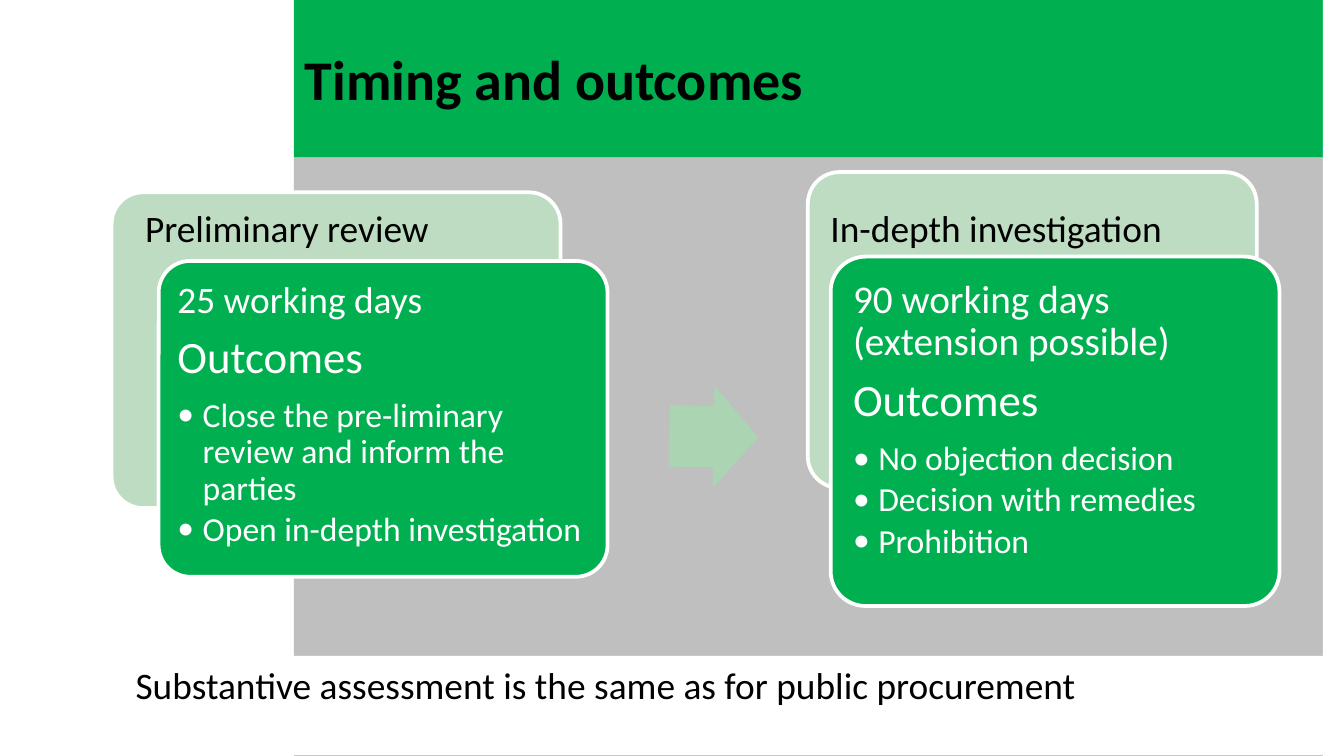
from lxml.etree import SubElement
from pptx import Presentation
from pptx.dml.color import RGBColor
from pptx.enum.shapes import MSO_SHAPE as Preset
from pptx.enum.text import MSO_ANCHOR as Anchor, MSO_AUTO_SIZE as AutoSize, PP_ALIGN as Align
from pptx.oxml.ns import qn
from pptx.util import Pt

BLACK = RGBColor(0x00, 0x00, 0x00)
WHITE = RGBColor(0xFF, 0xFF, 0xFF)
GREY = RGBColor(0xBF, 0xBF, 0xBF)
GREEN = RGBColor(0x00, 0xB0, 0x50)
PALE_GREEN = RGBColor(0xBD, 0xDC, 0xC2)
ARROW_GREEN = RGBColor(0xAB, 0xD4, 0xB3)

BULLET_INDENT = 13.5
CARD_WIDTH = 240.5
BACK_HEIGHT = 169.2

STAGES = [
    {
        "heading": ("Preliminary review", (70.6, 106.5, 170, 31.5)),
        "back": (59.8, 103),
        "front": (85, 139.8, 169.2),
        "inset": 5.8,
        "text": (89.3, 144.7, 230.4, 159.8),
        "duration": ("25 working days", 20),
        "outcomes": [
            "Close the pre-liminary review and inform the parties",
            "Open in-depth investigation",
        ],
    },
    {
        "heading": ("In-depth investigation", (437.8, 106.5, 193, 31.5)),
        "back": (432.8, 92.2),
        "front": (445, 137.5, 187.2),
        "inset": 6.3,
        "text": (450.7, 143.3, 229, 176.4),
        "duration": ("90 working days (extension possible)", 21),
        "outcomes": ["No objection decision", "Decision with remedies", "Prohibition"],
    },
]


def apply_format(target, values):
    for name, value in values.items():
        setattr(target, name, value)


def format_font(paragraph, size, color, bold=False):
    apply_format(paragraph.font, {"name": "Calibri", "size": Pt(size), "bold": bold})
    paragraph.font.color.rgb = color


def add_block(slide, preset, box, fill, outline=None):
    shape = slide.shapes.add_shape(preset, *map(Pt, box))
    shape.shadow.inherit = False
    shape.fill.solid()
    shape.fill.fore_color.rgb = fill
    if outline is None:
        shape.line.fill.background()
    else:
        shape.line.color.rgb = outline
        shape.line.width = Pt(2)
    return shape


def add_card(slide, box, fill):
    card = add_block(slide, Preset.ROUNDED_RECTANGLE, box, fill, WHITE)
    card.adjustments[0] = 0.1


def write_label(shape, text):
    frame = shape.text_frame
    apply_format(frame, {
        "word_wrap": True, "vertical_anchor": Anchor.TOP,
        "auto_size": AutoSize.SHAPE_TO_FIT_TEXT,
    })
    paragraph = frame.paragraphs[0]
    paragraph.text = text
    paragraph.alignment = Align.LEFT
    format_font(paragraph, 20, BLACK)


def add_bullet(paragraph):
    properties = paragraph._p.get_or_add_pPr()
    properties.set("marL", str(Pt(BULLET_INDENT)))
    properties.set("indent", str(-Pt(BULLET_INDENT)))
    SubElement(properties, qn("a:buFont")).set("typeface", "Calibri")
    SubElement(properties, qn("a:buChar")).set("char", "•")


def add_stage_text(slide, stage):
    frame = slide.shapes.add_textbox(*map(Pt, stage["text"])).text_frame
    margins = ("margin_left", "margin_top", "margin_right", "margin_bottom")
    apply_format(frame, dict.fromkeys(margins, Pt(stage["inset"])))
    frame.word_wrap = True
    lines = [(*stage["duration"], False), ("Outcomes", 24, False)]
    lines += [(outcome, 18, True) for outcome in stage["outcomes"]]
    for index, (text, size, bulleted) in enumerate(lines):
        paragraph = frame.add_paragraph() if index else frame.paragraphs[0]
        paragraph.text = text
        if bulleted:
            paragraph.level = 1
            add_bullet(paragraph)
        share = 0.15 if bulleted else 0.35
        apply_format(paragraph, {
            "line_spacing": 0.9, "space_before": Pt(0),
            "space_after": Pt(round(size * share, 1)),
        })
        format_font(paragraph, size, WHITE)


def add_stage(slide, stage):
    left, top, height = stage["front"]
    add_card(slide, (*stage["back"], CARD_WIDTH, BACK_HEIGHT), PALE_GREEN)
    add_card(slide, (left, top, CARD_WIDTH, height), GREEN)
    add_stage_text(slide, stage)
    text, box = stage["heading"]
    write_label(slide.shapes.add_textbox(*map(Pt, box)), text)


def add_background(slide):
    for box, color in [
        ((157.5, 84.2, 562.5, 320.8), GREY),
        ((157.5, 0, 562.5, 84.2), GREEN),
        ((708.7, 0, 11.3, 405), WHITE),
    ]:
        add_block(slide, Preset.RECTANGLE, box, color)


def set_title(slide, text):
    title = slide.shapes.title
    apply_format(title, {
        "left": Pt(156.2), "top": Pt(0), "width": Pt(550), "height": Pt(84.2),
    })
    slide.shapes._spTree.append(title._element)
    frame = title.text_frame
    frame.text = text
    apply_format(frame, {"word_wrap": True, "vertical_anchor": Anchor.MIDDLE})
    frame.paragraphs[0].alignment = Align.LEFT
    format_font(frame.paragraphs[0], 30, BLACK, bold=True)


def add_arrow(slide):
    arrow = add_block(slide, Preset.RIGHT_ARROW, (358.6, 206.6, 47.5, 54.7), ARROW_GREEN)
    arrow.rotation = 1
    arrow.adjustments[0] = 0.6
    arrow.adjustments[1] = 0.5


def main():
    presentation = Presentation()
    apply_format(presentation, {"slide_width": Pt(720), "slide_height": Pt(405)})
    slide = presentation.slides.add_slide(presentation.slide_layouts[5])
    add_background(slide)
    set_title(slide, "Timing and outcomes")
    for stage in STAGES:
        add_stage(slide, stage)
    add_arrow(slide)
    footer = add_block(slide, Preset.RECTANGLE, (65.5, 351.4, 646.6, 53.2), WHITE)
    write_label(footer, "Substantive assessment is the same as for public procurement")
    footer.text_frame.auto_size = AutoSize.NONE
    presentation.save("out.pptx")


if __name__ == "__main__":
    main()
